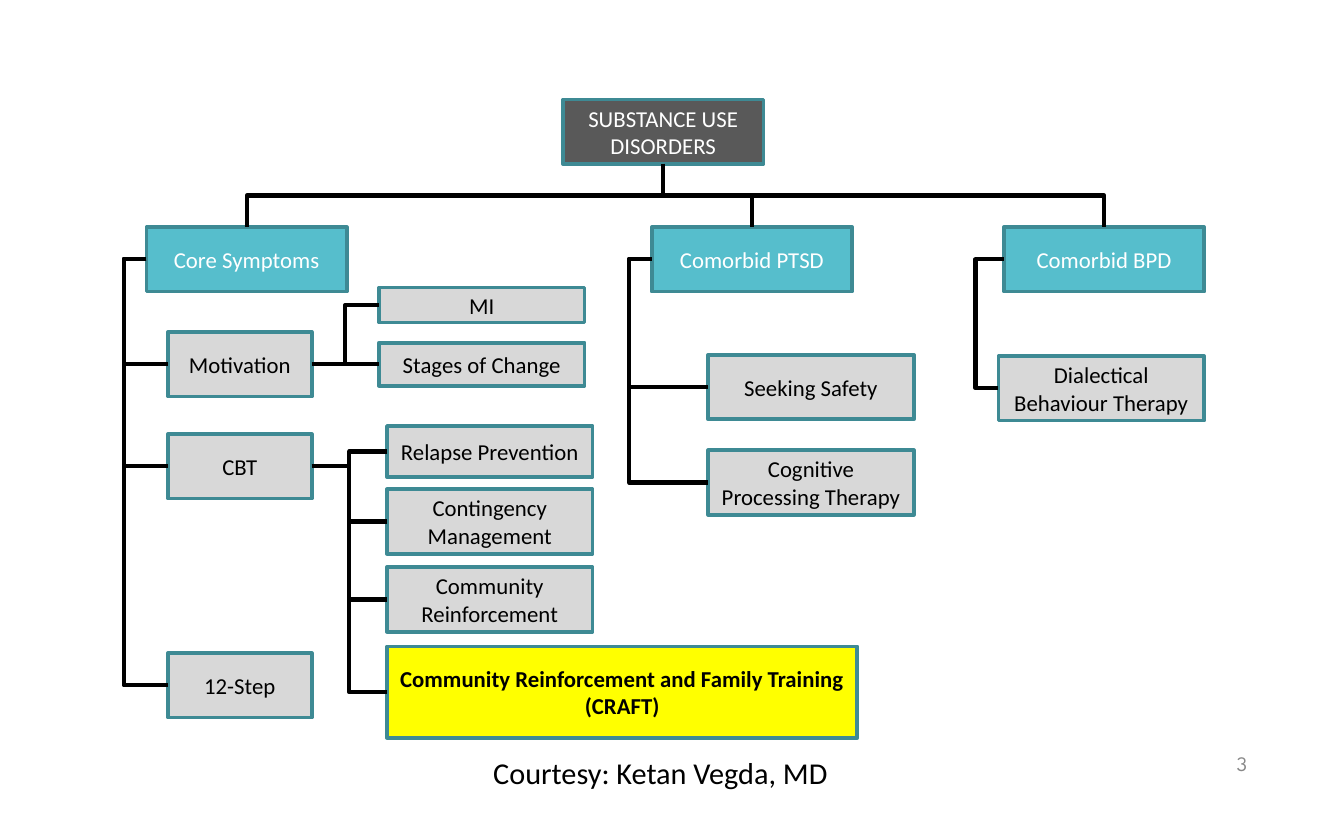
from lxml import etree
from pptx import Presentation
from pptx.dml.color import RGBColor
from pptx.enum.shapes import MSO_CONNECTOR as Link, MSO_SHAPE as Shape
from pptx.enum.text import MSO_ANCHOR as Anchor, PP_ALIGN as Align
from pptx.oxml.ns import qn
from pptx.util import Inches, Pt

TOP, LEFT, BOTTOM, RIGHT = range(4)
BRANCH = {"fill": "56BECC", "color": "FFFFFF"}


def rgb(value):
    return RGBColor.from_string(value)


def write(frame, text, size=12.2, font="Calibri", color="000000", bold=False,
          align=Align.CENTER, anchor=Anchor.MIDDLE):
    frame.word_wrap = True
    frame.vertical_anchor = anchor
    frame.margin_left = frame.margin_right = Inches(0.09)
    frame.margin_top = frame.margin_bottom = Inches(0.04)
    frame.text = text
    for para in frame.paragraphs:
        para.alignment = align
        for span in para.runs:
            span.font.size = Pt(size)
            span.font.name = font
            span.font.bold = bold
            span.font.color.rgb = rgb(color)


def add_label(page, text, left, top, width, height, **style):
    label = page.shapes.add_textbox(*map(Inches, (left, top, width, height)))
    write(label.text_frame, text, **style)


def add_box(page, text, left, top, width=1.53, height=0.48, fill="D8D8D8", **style):
    box = page.shapes.add_shape(Shape.RECTANGLE, *map(Inches, (left, top, width, height)))
    box.shadow.inherit = False
    box.fill.solid()
    box.fill.fore_color.rgb = rgb(fill)
    box.line.color.rgb = rgb("3E8A94")
    box.line.width = Pt(2)
    write(box.text_frame, text, **style)
    return box


def add_elbow(page, parent, child, start, end):
    elbow = page.shapes.add_connector(Link.ELBOW, 0, 0, 0, 0)
    elbow.begin_connect(parent, start)
    elbow.end_connect(child, end)
    elbow.line.color.rgb = rgb("000000")
    elbow.line.width = Pt(2.25)
    etree.SubElement(elbow._element.spPr, qn("a:effectLst"))
    return elbow


def set_bend(elbow, ratio):
    guides = elbow._element.spPr.find(qn("a:prstGeom")).find(qn("a:avLst"))
    etree.SubElement(guides, qn("a:gd"), name="adj1", fmla=f"val {round(ratio * 100000)}")


def link_down(page, parent, children):
    for child in children:
        elbow = add_elbow(page, parent, child, BOTTOM, TOP)
        across = elbow.end_x - elbow.begin_x
        drop = elbow.end_y - elbow.begin_y
        middle_x = (elbow.begin_x + elbow.end_x) // 2
        middle_y = (elbow.begin_y + elbow.end_y) // 2
        elbow.width, elbow.height = drop, abs(across)
        elbow.left = middle_x - drop // 2
        elbow.top = middle_y - abs(across) // 2
        frame = elbow._element.spPr.find(qn("a:xfrm"))
        frame.attrib.pop("flipH", None)
        frame.set("rot", "5400000" if across < 0 else "16200000")
        if across > 0:
            frame.set("flipH", "1")
        set_bend(elbow, 0.5)


def link_side(page, parent, children, start, bend_x):
    for child in children:
        elbow = add_elbow(page, parent, child, start, LEFT)
        reach = elbow.end_x - elbow.begin_x
        set_bend(elbow, (Inches(bend_x) - elbow.begin_x) / reach)


def main():
    deck = Presentation()
    deck.slide_width, deck.slide_height = Inches(10), Inches(6.25)
    page = deck.slides.add_slide(deck.slide_layouts[6])

    root = add_box(page, "SUBSTANCE USE DISORDERS", 4.19, 0.74, 1.49,
                   fill="595959", color="FFFFFF")
    core, ptsd, bpd = [
        add_box(page, text, left, 1.69, 1.49, **BRANCH)
        for text, left in (("Core Symptoms", 1.09), ("Comorbid PTSD", 4.85),
                           ("Comorbid BPD", 7.47))]
    motivation, cbt, twelve_step = [
        add_box(page, text, 1.25, top, 1.07)
        for text, top in (("Motivation", 2.47), ("CBT", 3.23), ("12-Step", 4.86))]
    motivation_methods = [
        add_box(page, "MI", 2.82, 2.14, height=0.26),
        add_box(page, "Stages of Change", 2.82, 2.55, height=0.32)]
    cbt_methods = [
        add_box(page, "Relapse Prevention", 2.88, 3.17, height=0.38),
        add_box(page, "Contingency Management", 2.88, 3.64),
        add_box(page, "Community Reinforcement", 2.88, 4.22),
        add_box(page, "Community Reinforcement and Family Training\n(CRAFT)",
                2.88, 4.81, 3.5, 0.68, fill="FFFF00", bold=True)]
    ptsd_methods = [
        add_box(page, "Seeking Safety", 5.27, 2.64),
        add_box(page, "Cognitive Processing Therapy", 5.27, 3.35)]
    dialectical = add_box(page, "Dialectical Behaviour Therapy", 7.43, 2.65)

    link_down(page, root, [core, bpd, ptsd])
    link_side(page, core, [motivation, cbt, twelve_step], LEFT, 0.92)
    link_side(page, motivation, motivation_methods, RIGHT, 2.57)
    link_side(page, cbt, cbt_methods, RIGHT, 2.6)
    link_side(page, ptsd, ptsd_methods, LEFT, 4.68)
    link_side(page, bpd, [dialectical], LEFT, 7.26)

    add_label(page, "Courtesy: Ketan Vegda, MD", 3.58, 5.57, 2.8, 0.36,
              size=16.2, align=Align.LEFT, anchor=Anchor.TOP)
    add_label(page, "3", 9.05, 5.53, 0.38, 0.3,
              size=11, font="League Spartan", color="888888")
    deck.save("out.pptx")


if __name__ == "__main__":
    main()
